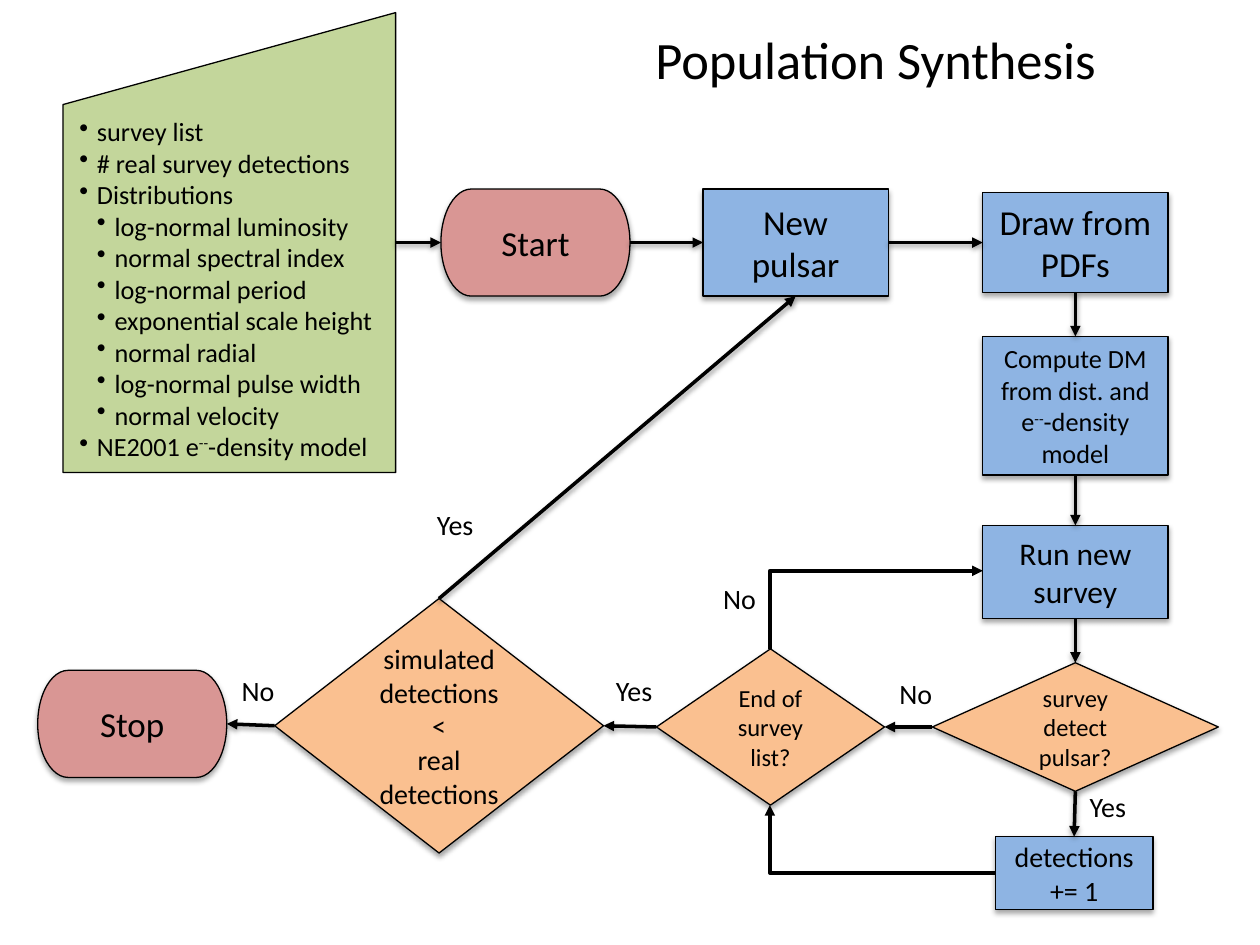
from lxml.etree import SubElement
from pptx import Presentation
from pptx.dml.color import RGBColor
from pptx.enum.shapes import MSO_CONNECTOR, MSO_SHAPE
from pptx.enum.text import MSO_ANCHOR, PP_ALIGN
from pptx.oxml.ns import qn
from pptx.util import Inches, Pt

BLACK = RGBColor(0x00, 0x00, 0x00)
GREEN = RGBColor(0xC3, 0xD6, 0x9B)
BLUE = RGBColor(0x8E, 0xB4, 0xE3)
ROSE = RGBColor(0xD9, 0x96, 0x94)
ORANGE = RGBColor(0xFA, 0xC0, 0x90)

PROCESS = (MSO_SHAPE.FLOWCHART_PROCESS, BLUE)
DECISION = (MSO_SHAPE.FLOWCHART_DECISION, ORANGE)
TERMINATOR = (MSO_SHAPE.FLOWCHART_TERMINATOR, ROSE)
INPUT = (MSO_SHAPE.FLOWCHART_MANUAL_INPUT, GREEN)

# Connection sites, in the order used by the preset shapes
TOP, LEFT, BOTTOM, RIGHT = range(4)

# name: kind, box, text size, paragraphs ("^" sets off raised text)
STEPS = {
    "start": (TERMINATOR, (3.5, 1.5, 1.5, 0.85), 20, ["Start"]),
    "pulsar": (PROCESS, (5.58, 1.5, 1.47, 0.85), 20, ["New pulsar"]),
    "draw": (PROCESS, (7.8, 1.53, 1.47, 0.79), 20, ["Draw from PDFs"]),
    "compute": (PROCESS, (7.8, 2.67, 1.47, 1.1), 15,
                ["Compute DM from dist. and e^--^-density model"]),
    "run": (PROCESS, (7.8, 4.17, 1.47, 0.74), 18, ["Run new survey"]),
    "detect": (DECISION, (7.4, 5.26, 2.27, 1.02), 14, ["survey detect pulsar?"]),
    "count": (PROCESS, (7.9, 6.64, 1.25, 0.58), 16, ["detections += 1"]),
    "end": (DECISION, (5.21, 5.15, 1.81, 1.24), 14, ["End of survey list?"]),
    "compare": (DECISION, (2.18, 4.75, 2.61, 2.02), 16,
                ["simulated detections <", "real detections"]),
    "stop": (TERMINATOR, (0.3, 5.32, 1.5, 0.85), 20, ["Stop"]),
}

ARROWS = [
    ("input", RIGHT, "start", LEFT),
    ("start", RIGHT, "pulsar", LEFT),
    ("pulsar", RIGHT, "draw", LEFT),
    ("draw", BOTTOM, "compute", TOP),
    ("compute", BOTTOM, "run", TOP),
    ("run", BOTTOM, "detect", TOP),
    ("detect", BOTTOM, "count", TOP),
    ("detect", LEFT, "end", RIGHT),
    ("end", LEFT, "compare", RIGHT),
    ("compare", LEFT, "stop", RIGHT),
    ("compare", TOP, "pulsar", BOTTOM),
]

# Inputs with their indent level
INPUTS = [
    (0, "survey list"),
    (0, "# real survey detections"),
    (0, "Distributions"),
    (1, "log-normal luminosity"),
    (1, "normal spectral index"),
    (1, "log-normal period"),
    (1, "exponential scale height"),
    (1, "normal radial"),
    (1, "log-normal pulse width"),
    (1, "normal velocity"),
    (0, "NE2001 e^--^-density model"),
]

LABELS = [
    ("Yes", 3.37, 3.98), ("No", 1.82, 5.3), ("Yes", 4.79, 5.3),
    ("No", 5.64, 4.57), ("Yes", 8.55, 6.22), ("No", 7.04, 5.32),
]


def write(para, text, size):
    """Fill a paragraph; every second part between carets is raised."""
    for i, part in enumerate(text.split("^")):
        span = para.add_run()
        span.text = part
        span.font.name = "Calibri"
        span.font.size = Pt(size)
        span.font.color.rgb = BLACK
        if i % 2:
            span._r.get_or_add_rPr().set("baseline", "30000")


def add_shadow(properties, distance, alpha):
    effects = properties.find(qn("a:effectLst"))
    if effects is None:
        effects = SubElement(properties, qn("a:effectLst"))
    shadow = SubElement(effects, qn("a:outerShdw"), blurRad=str(Pt(3.1)),
                        dist=str(Pt(distance)), dir="5400000", rotWithShape="0")
    color = SubElement(shadow, qn("a:srgbClr"), val="000000")
    SubElement(color, qn("a:alpha"), val=str(alpha * 1000))


def add_step(page, kind, box, size, texts):
    preset, fill = kind
    step = page.shapes.add_shape(preset, *map(Inches, box))
    step.fill.solid()
    step.fill.fore_color.rgb = fill
    step.line.color.rgb = BLACK
    step.line.width = Pt(0.75)
    step.shadow.inherit = False
    frame = step.text_frame
    frame.word_wrap = True
    frame.vertical_anchor = MSO_ANCHOR.MIDDLE
    frame.margin_left = frame.margin_right = Inches(0.13)
    frame.margin_top = frame.margin_bottom = Inches(0.07)
    for i, text in enumerate(texts):
        para = frame.add_paragraph() if i else frame.paragraphs[0]
        para.alignment = PP_ALIGN.CENTER
        write(para, text, size)
    return step


def add_inputs(page, box):
    panel = add_step(page, INPUT, box, 15, [text for _, text in INPUTS])
    hang = Inches(0.14)
    for para, (level, _) in zip(panel.text_frame.paragraphs, INPUTS):
        para.alignment = PP_ALIGN.LEFT
        properties = para._p.get_or_add_pPr()
        properties.set("marL", str(hang * (level + 1)))
        properties.set("indent", str(-hang))
        SubElement(properties, qn("a:buChar"), char="•")
    return panel


def style_arrow(arrow):
    arrow.line.color.rgb = BLACK
    arrow.line.width = Pt(2)
    properties = arrow._element.spPr
    SubElement(properties.find(qn("a:ln")), qn("a:tailEnd"), type="triangle")
    return properties


def add_arrow(page, source, source_site, target, target_site):
    arrow = page.shapes.add_connector(MSO_CONNECTOR.STRAIGHT, 0, 0, 0, 0)
    arrow.begin_connect(source, source_site)
    arrow.end_connect(target, target_site)
    add_shadow(style_arrow(arrow), 1.6, 38)


def add_bent_arrow(page, box, turn):
    """Place a one-corner arrow in the box, turned by 180 or 270 degrees."""
    left, top, width, height = box
    if turn == 270:  # the unturned frame has its sides swapped
        left, top = left + (width - height) / 2, top + (height - width) / 2
        width, height = height, width
    arrow = page.shapes.add_connector(
        MSO_CONNECTOR.ELBOW, Inches(left), Inches(top),
        Inches(left + width), Inches(top + height))
    properties = style_arrow(arrow)
    properties.find(qn("a:prstGeom")).set("prst", "bentConnector2")
    properties.find(qn("a:xfrm")).set("rot", str(turn * 60000))
    SubElement(properties, qn("a:effectLst"))


def add_text(page, box, text, size):
    label = page.shapes.add_textbox(*map(Inches, box))
    write(label.text_frame.paragraphs[0], text, size)
    return label.text_frame


def add_title(page, box):
    frame = add_text(page, box, "Population Synthesis", 30)
    frame.word_wrap = True
    frame.vertical_anchor = MSO_ANCHOR.MIDDLE
    frame.paragraphs[0].alignment = PP_ALIGN.CENTER


def add_flowchart(page):
    # Steps
    steps = {"input": add_inputs(page, (0.5, 0.1, 2.64, 3.65))}
    for name, (kind, box, size, texts) in STEPS.items():
        steps[name] = add_step(page, kind, box, size, texts)
        add_shadow(steps[name]._element.spPr, 1.8, 35)
    # Arrows
    for source, source_site, target, target_site in ARROWS:
        add_arrow(page, steps[source], source_site, steps[target], target_site)
    add_bent_arrow(page, (6.11, 6.39, 1.79, 0.54), 180)
    add_bent_arrow(page, (6.11, 4.53, 1.69, 0.62), 270)
    # Branch labels
    for text, left, top in LABELS:
        add_text(page, (left, top, 0.5, 0.37), text, 16).word_wrap = False


def main():
    deck = Presentation()
    deck.slide_width, deck.slide_height = Inches(10), Inches(7.5)
    page = deck.slides.add_slide(deck.slide_layouts[6])
    add_flowchart(page)
    add_title(page, (3.95, 0, 6, 0.93))
    deck.save("out.pptx")


if __name__ == "__main__":
    main()
